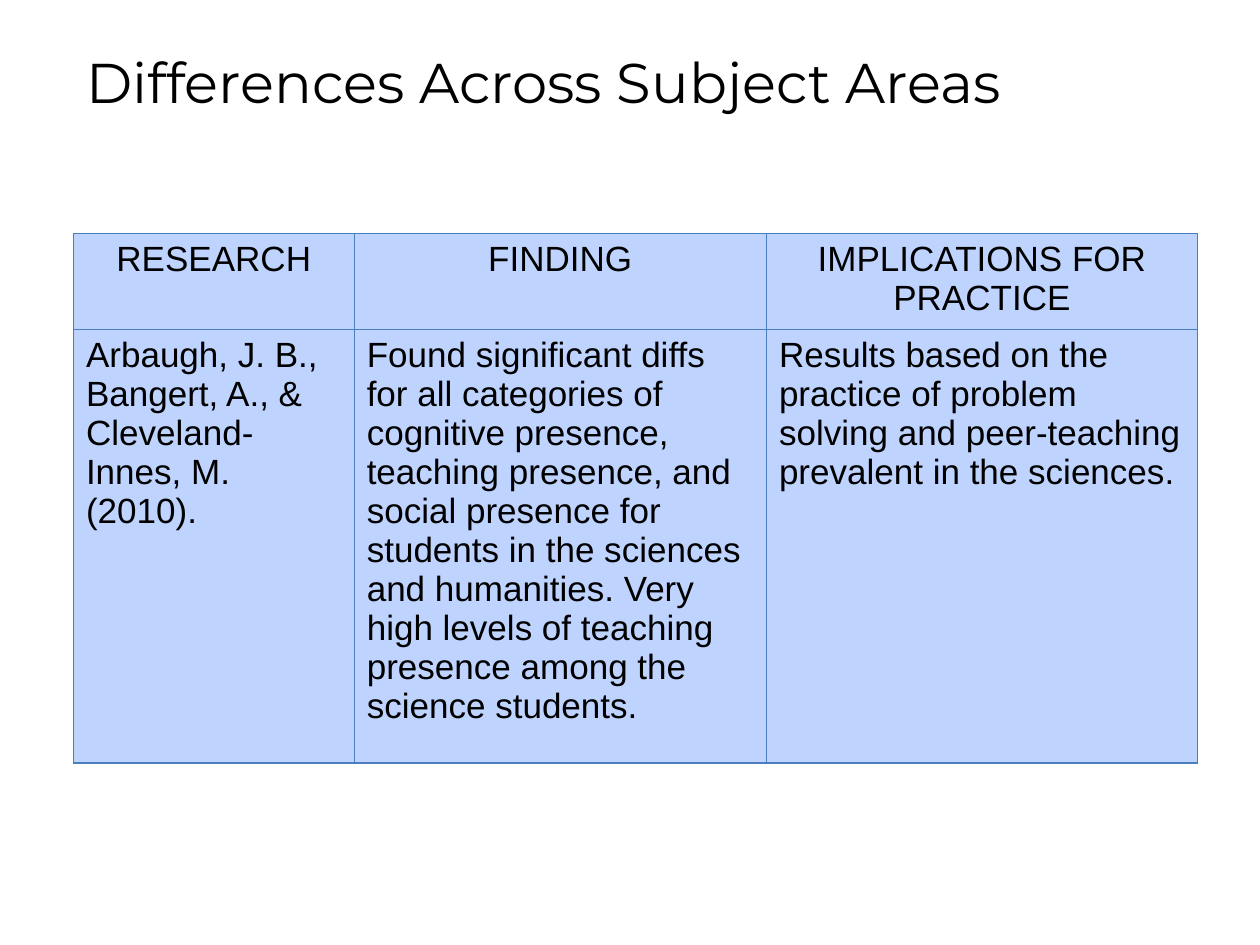
from lxml.etree import SubElement
from pptx import Presentation
from pptx.dml.color import RGBColor
from pptx.enum.text import MSO_ANCHOR as Anchor, MSO_AUTO_SIZE as AutoSize, PP_ALIGN as Align
from pptx.oxml.ns import qn
from pptx.util import Cm, Pt

BLACK = RGBColor(0x00, 0x00, 0x00)
PALE_BLUE = RGBColor(0xBF, 0xD3, 0xFF)
BORDER_BLUE = RGBColor(0x4B, 0x7E, 0xBC)

TITLE = "Differences Across Subject Areas"
COLUMN_WIDTHS = (5.66, 8.31, 8.69)
ROW_HEIGHTS = (1.93, 8.74)
ROWS = (
    ("RESEARCH", "FINDING", "IMPLICATIONS FOR PRACTICE"),
    (
        "Arbaugh, J. B., Bangert, A., & Cleveland-Innes, M. (2010).",
        "Found significant diffs for all categories of cognitive presence, "
        "teaching presence, and social presence for students in the sciences "
        "and humanities. Very high levels of teaching presence among the "
        "science students.",
        "Results based on the practice of problem solving and peer-teaching "
        "prevalent in the sciences.",
    ),
)


class SlideBuilder:
    """Holds the style and the current slide, and adds each kind of element."""

    title_font = {"name": "Montserrat", "size": Pt(32), "bold": False}
    table_font = {"name": "Arial", "size": Pt(20), "bold": False}
    title_frame = {"word_wrap": True, "auto_size": AutoSize.NONE, "vertical_anchor": Anchor.TOP}
    table_flags = {"first_row": False, "horz_banding": False}
    border_width = Pt(0.75)

    def __init__(self, presentation):
        self.slide = presentation.slides.add_slide(presentation.slide_layouts[5])

    @staticmethod
    def apply(target, values):
        for name, value in values.items():
            setattr(target, name, value)

    def set_text(self, frame, text, font, alignment):
        frame.text = text
        paragraph = frame.paragraphs[0]
        paragraph.alignment = alignment
        run = paragraph.runs[0]
        self.apply(run.font, font)
        run.font.color.rgb = BLACK

    def add_title(self, text, left, top, width, height):
        title = self.slide.shapes.title
        self.apply(title, {"left": left, "top": top, "width": width, "height": height})
        self.apply(title.text_frame, self.title_frame)
        self.set_text(title.text_frame, text, self.title_font, Align.LEFT)

    def add_borders(self, cell):
        properties = cell._tc.get_or_add_tcPr()
        for side in ("a:lnL", "a:lnR", "a:lnT", "a:lnB"):
            line = SubElement(properties, qn(side), w=str(self.border_width))
            fill = SubElement(line, qn("a:solidFill"))
            SubElement(fill, qn("a:srgbClr"), val=str(BORDER_BLUE))

    def add_table(self, rows, left, top, widths, heights):
        table = self.slide.shapes.add_table(
            len(rows), len(widths), left, top, Cm(sum(widths)), Cm(sum(heights))
        ).table
        self.apply(table, self.table_flags)
        for column, width in zip(table.columns, widths):
            column.width = Cm(width)
        for index, (row, height, texts) in enumerate(zip(table.rows, heights, rows)):
            row.height = Cm(height)
            alignment = Align.LEFT if index else Align.CENTER
            for cell, text in zip(row.cells, texts):
                self.set_text(cell.text_frame, text, self.table_font, alignment)
                self.add_borders(cell)
                cell.fill.solid()
                cell.fill.fore_color.rgb = PALE_BLUE


def main():
    presentation = Presentation()
    presentation.slide_width = Cm(25.4)
    presentation.slide_height = Cm(19.05)
    builder = SlideBuilder(presentation)
    builder.add_table(ROWS, Cm(1.48), Cm(4.71), COLUMN_WIDTHS, ROW_HEIGHTS)
    builder.add_title(TITLE, Cm(1.48), Cm(0.84), Cm(23.92), Cm(1.63))
    presentation.save("out.pptx")


if __name__ == "__main__":
    main()
